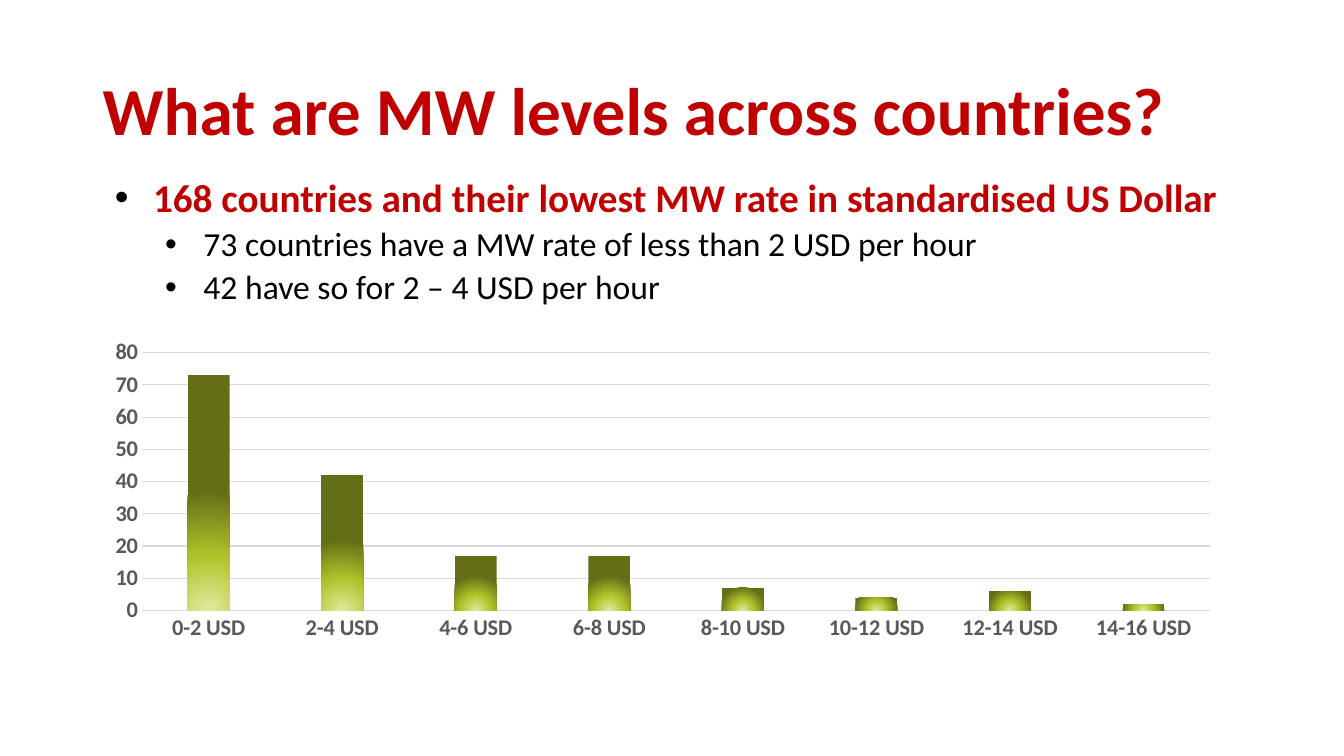
from lxml import etree
from pptx import Presentation
from pptx.chart.data import CategoryChartData
from pptx.dml.color import RGBColor
from pptx.enum.chart import XL_CHART_TYPE as ChartType, XL_TICK_MARK as TickMark
from pptx.enum.text import MSO_ANCHOR as Anchor
from pptx.oxml import parse_xml
from pptx.oxml.ns import nsdecls, qn
from pptx.util import Emu, Inches, Pt

WIDTH, HEIGHT = Inches(13.33), Inches(7.5)
FONT = "Calibri"
RED, BLACK, LABEL_GRAY, LINE_GRAY = "C00000", "000000", "595959", "D9D9D9"
BAR_GRADIENT = [(0, "E2EBA0"), (46, "B1C32A"), (100, "646E17")]

# Share of the slide: left, top, width, height
TITLE_AREA = (0.069, 0.0533, 0.8627, 0.1933)
POINTS_AREA = (0.069, 0.2293, 0.8627, 0.6707)
CHART_AREA = (0.069, 0.44, 0.8485, 0.4173)

# Format of each outline level
TITLE_FORMAT = {"size": Pt(48), "bold": True}
POINT_FORMATS = [
    {"size": Pt(28), "bold": True},
    {"size": Pt(24), "bold": False},
]
POINT_COLORS = [RED, BLACK]

POINTS = [
    (0, "168 countries and their lowest MW rate in standardised US Dollar"),
    (1, "73 countries have a MW rate of less than 2 USD per hour"),
    (1, "42 have so for 2 – 4 USD per hour"),
]
COUNTRIES_PER_BAND = [73, 42, 17, 17, 7, 4, 6, 2]
BAND_WIDTH = 2


def color(hex_code):
    return RGBColor.from_string(hex_code)


def place(area):
    sides = (WIDTH, HEIGHT, WIDTH, HEIGHT)
    return [Emu(round(share * side)) for share, side in zip(area, sides)]


def set_format(target, settings):
    for name, value in settings.items():
        setattr(target, name, value)


def style_font(font, settings, hex_code):
    set_format(font, {"name": FONT, **settings})
    font.color.rgb = color(hex_code)


def add_text_area(slide, area, anchor):
    frame = slide.shapes.add_textbox(*place(area)).text_frame
    set_format(frame, {"word_wrap": True, "vertical_anchor": anchor})
    return frame


def write(paragraph, text, settings, hex_code):
    paragraph.line_spacing = 0.9
    run = paragraph.add_run()
    run.text = text
    style_font(run.font, settings, hex_code)


def add_bullet(paragraph, level):
    paragraph.level = level
    props = paragraph._p.get_or_add_pPr()
    props.set("marL", str(Inches(0.5 + 0.5 * level)))
    props.set("indent", str(Inches(-0.38)))
    bullet_color = etree.SubElement(props, qn("a:buClr"))
    etree.SubElement(bullet_color, qn("a:srgbClr"), val=BLACK)
    etree.SubElement(props, qn("a:buFont"), typeface="Arial")
    etree.SubElement(props, qn("a:buChar"), char="•")


def add_points(slide):
    frame = add_text_area(slide, POINTS_AREA, Anchor.TOP)
    for index, (level, text) in enumerate(POINTS):
        paragraph = frame.add_paragraph() if index else frame.paragraphs[0]
        add_bullet(paragraph, level)
        paragraph.space_before = Pt(5 if index else 0)
        write(paragraph, text, POINT_FORMATS[level], POINT_COLORS[level])


def glow_from_base(bars):
    """Fill the bars with a circular gradient centred below their base."""
    bars.format.fill.solid()
    solid = bars._element.spPr.find(qn("a:solidFill"))
    stops = "".join(
        f'<a:gs pos="{pos * 1000}"><a:srgbClr val="{code}"/></a:gs>'
        for pos, code in BAR_GRADIENT
    )
    gradient = parse_xml(
        f'<a:gradFill {nsdecls("a")} flip="none" rotWithShape="1">'
        f"<a:gsLst>{stops}</a:gsLst>"
        '<a:path path="circle">'
        '<a:fillToRect l="50000" t="130000" r="50000" b="-30000"/>'
        "</a:path></a:gradFill>"
    )
    solid.getparent().replace(solid, gradient)


def style_line(line, hex_code):
    line.color.rgb = color(hex_code)
    line.width = Pt(0.75)


def style_axis(axis):
    set_format(axis, {"major_tick_mark": TickMark.NONE,
                      "minor_tick_mark": TickMark.NONE})
    style_font(axis.tick_labels.font, {"size": Pt(16), "bold": True}, LABEL_GRAY)


def add_band_chart(slide):
    data = CategoryChartData(number_format="0")
    data.categories = [f"{band * BAND_WIDTH}-{(band + 1) * BAND_WIDTH} USD"
                       for band in range(len(COUNTRIES_PER_BAND))]
    data.add_series("Series 1", COUNTRIES_PER_BAND)
    chart = slide.shapes.add_chart(
        ChartType.COLUMN_CLUSTERED, *place(CHART_AREA), data).chart
    set_format(chart, {"has_legend": False, "has_title": False})
    style_font(chart.font, {"size": Pt(10)}, BLACK)

    # Columns
    columns = chart.plots[0]
    set_format(columns, {"gap_width": 219, "overlap": -27,
                         "vary_by_categories": False})
    glow_from_base(columns.series[0])

    # Axes and grid
    bands, counts = chart.category_axis, chart.value_axis
    for axis in (bands, counts):
        style_axis(axis)
    style_line(bands.format.line, LINE_GRAY)
    counts.format.line.fill.background()
    style_line(counts.major_gridlines.format.line, LINE_GRAY)
    set_format(counts, {"minimum_scale": 0, "maximum_scale": 80, "major_unit": 10})
    set_format(counts.tick_labels, {"number_format": "0",
                                    "number_format_is_linked": False})


def main():
    deck = Presentation()
    set_format(deck, {"slide_width": WIDTH, "slide_height": HEIGHT})
    slide = deck.slides.add_slide(deck.slide_layouts[6])

    # Heading
    heading = add_text_area(slide, TITLE_AREA, Anchor.MIDDLE)
    write(heading.paragraphs[0], "What are MW levels across countries?",
          TITLE_FORMAT, RED)

    # Key points above the distribution of wage levels
    add_points(slide)
    add_band_chart(slide)
    deck.save("out.pptx")


if __name__ == "__main__":
    main()
